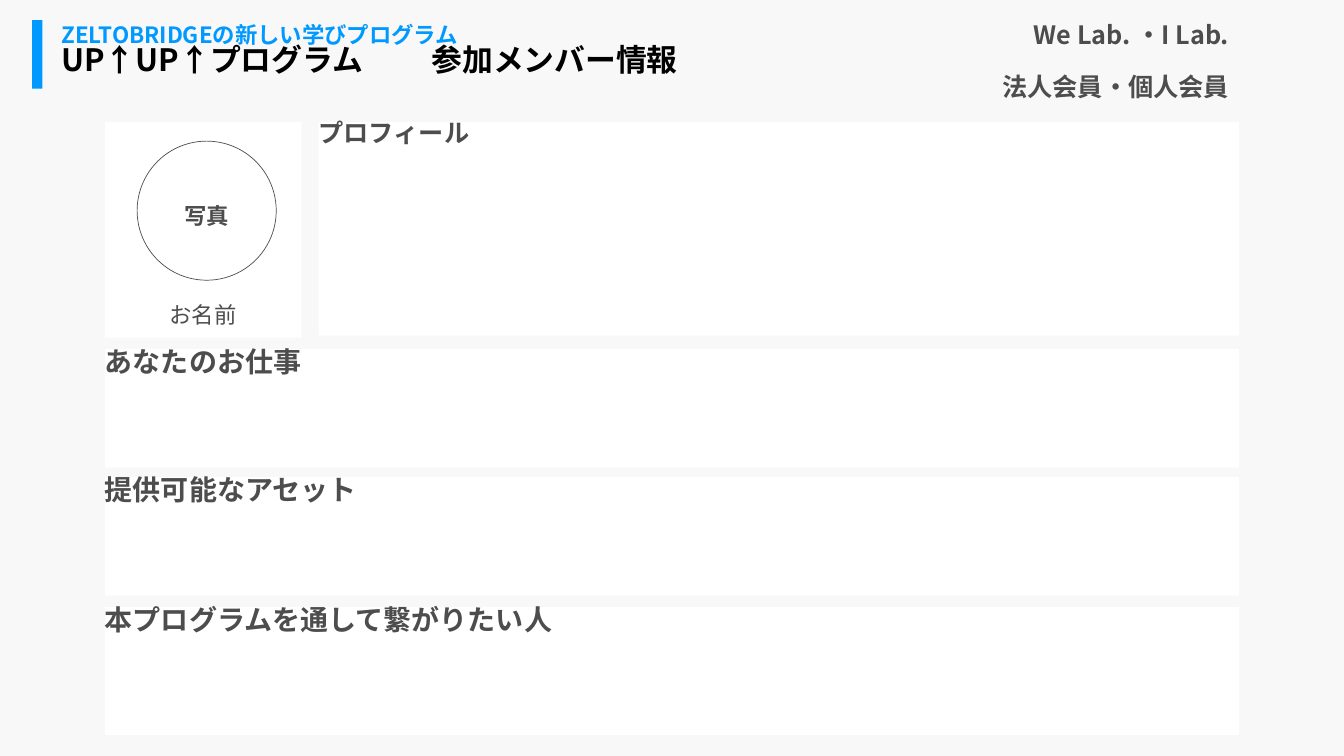
from pptx import Presentation
from pptx.dml.color import RGBColor
from pptx.enum.shapes import MSO_SHAPE
from pptx.enum.text import MSO_ANCHOR, PP_ALIGN
from pptx.oxml import parse_xml
from pptx.oxml.ns import nsdecls
from pptx.util import Inches, Pt

FONT = "Noto Sans CJK JP"
BLUE = RGBColor(0x00, 0x99, 0xFF)
GRAY = RGBColor(0x4D, 0x4D, 0x4D)
BLACK = RGBColor(0, 0, 0)
WHITE = RGBColor(0xFF, 0xFF, 0xFF)
PAGE = RGBColor(0xF8, 0xF8, 0xF8)

LEFT, RIGHT = 1.04, 12.29
TIGHT = 0.87


def write(p, text, size, bold=True, color=GRAY, align=PP_ALIGN.LEFT, spacing=TIGHT):
    p.alignment, p.line_spacing = align, spacing
    r = p.add_run()
    r.text = text
    for name, value in {"size": Pt(size), "bold": bold, "name": FONT}.items():
        setattr(r.font, name, value)
    r.font.color.rgb = color
    r.font.fill  # the colour goes before the typefaces
    latin = r.font._element.find("{*}latin")
    latin.addnext(parse_xml(f'<a:ea {nsdecls("a")} typeface="{FONT}"/>'))


def set_frame(tf, anchor=MSO_ANCHOR.TOP, wrap=True, margins=(0, 0, 0, 0)):
    tf.word_wrap, tf.vertical_anchor = wrap, anchor
    for side, margin in zip(("left", "top", "right", "bottom"), margins):
        setattr(tf, f"margin_{side}", Inches(margin))


def add_panel(s, box, kind=MSO_SHAPE.RECTANGLE, fill=WHITE, line=None):
    sp = s.shapes.add_shape(kind, *map(Inches, box))
    sp.shadow.inherit = False
    sp.fill.solid()
    sp.fill.fore_color.rgb = fill
    if line is None:
        sp.line.fill.background()
    else:
        sp.line.color.rgb = line
        sp.line.width = Pt(0.5)
    return sp


def add_header(s, x, y):
    title = s.shapes.title
    box = {"left": x + 0.19, "top": y, "width": 12.5, "height": 0.8}
    for name, value in box.items():
        setattr(title, name, Inches(value))
    tf = title.text_frame
    set_frame(tf, margins=(0.1, 0.07, 0.1, 0.05))
    write(tf.paragraphs[0], "ZELTOBRIDGEの新しい学びプログラム", 16, color=BLUE, spacing=0.8)
    p = tf.add_paragraph()
    p._p.get_or_add_pPr().append(parse_xml(
        f'<a:tabLst {nsdecls("a")}><a:tab pos="{Inches(3.67)}" algn="l"/></a:tabLst>'))
    write(p, "UP↑UP↑プログラム\t参加メンバー情報", 22, color=BLACK, spacing=0.8)
    add_panel(s, (x, y + 0.01, 0.1, 0.68), fill=BLUE)


def add_membership(s, right, y):
    for i, text in enumerate(("We Lab. ・I Lab.", "法人会員・個人会員")):
        width = 2.47
        sp = s.shapes.add_textbox(*map(Inches, (right - width, y + 0.52 * i, width, 0.4)))
        set_frame(sp.text_frame, wrap=False, margins=(0.1, 0.05, 0.1, 0.05))
        write(sp.text_frame.paragraphs[0], text, 18, align=PP_ALIGN.RIGHT)


def add_photo_card(s, x, y, w, h):
    centred = {"align": PP_ALIGN.CENTER, "spacing": 1.4}
    card = add_panel(s, (x, y, w, h))
    set_frame(card.text_frame, MSO_ANCHOR.BOTTOM, margins=(0, 0, 0, 0.1))
    write(card.text_frame.paragraphs[0], "お名前", 16, bold=False, **centred)
    photo = add_panel(s, (x + 0.32, y + 0.19, 1.38, 1.38), MSO_SHAPE.OVAL, line=GRAY)
    set_frame(photo.text_frame, MSO_ANCHOR.MIDDLE)
    write(photo.text_frame.paragraphs[0], "写真", 16, **centred)


def add_section(s, heading, size, box):
    tf = add_panel(s, box).text_frame
    set_frame(tf)
    write(tf.paragraphs[0], heading, size)


def main():
    prs = Presentation()
    prs.slide_width, prs.slide_height = Inches(13.33), Inches(7.5)
    s = prs.slides.add_slide(prs.slide_layouts[5])
    s.background.fill.solid()
    s.background.fill.fore_color.rgb = PAGE

    add_header(s, 0.32, 0.19)
    add_membership(s, RIGHT, 0.18)
    add_photo_card(s, LEFT, 1.21, 1.95, 2.14)
    add_section(s, "プロフィール", 18, (3.16, 1.21, RIGHT - 3.16, 2.12))
    for heading, y, h in (
        ("あなたのお仕事", 3.46, 1.18),
        ("提供可能なアセット", 4.73, 1.18),
        ("本プログラムを通して繋がりたい人", 6.02, 1.27),
    ):
        add_section(s, heading, 20, (LEFT, y, RIGHT - LEFT, h))
    prs.save("out.pptx")


if __name__ == "__main__":
    main()
